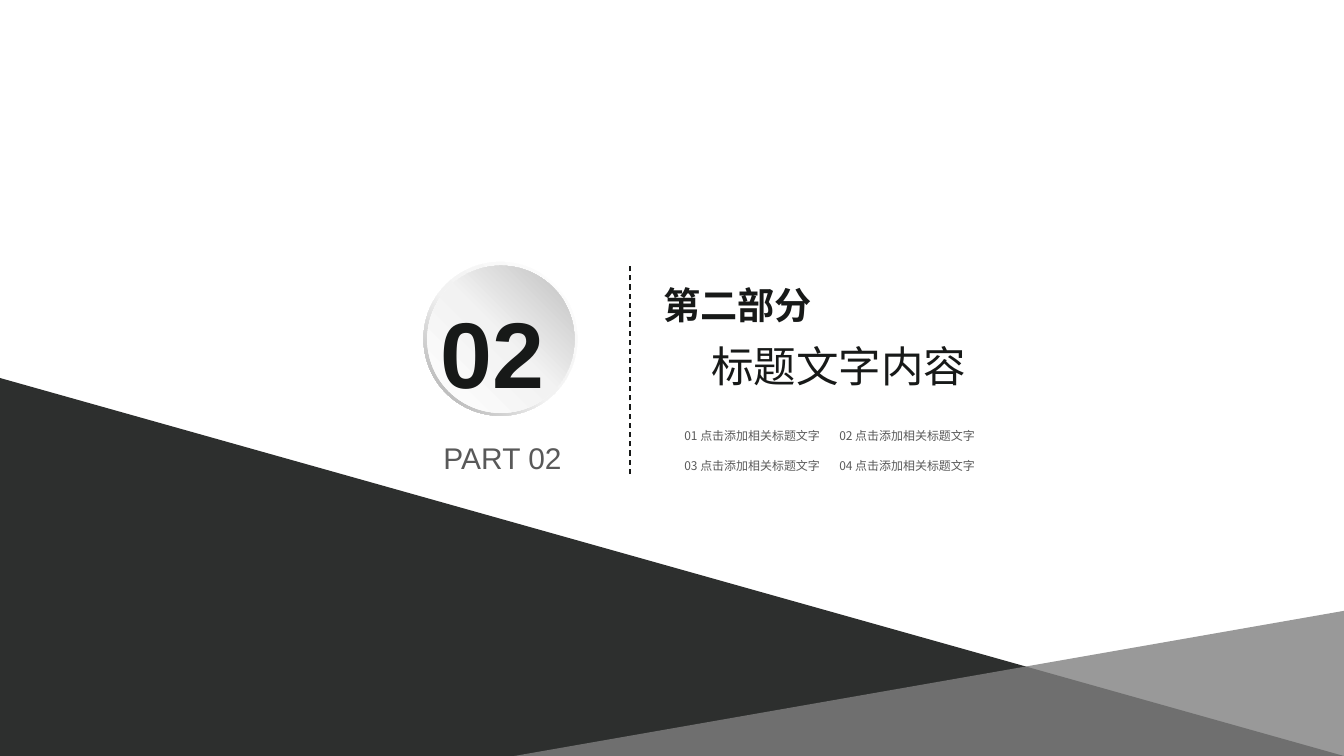
from copy import deepcopy

from pptx import Presentation
from pptx import util as u
from pptx.dml.color import RGBColor
from pptx.enum import dml, shapes, text
from pptx.oxml.ns import qn
from lxml import etree

WIDTH, HEIGHT = u.Inches(14.06), u.Inches(7.91)
INK, GREY = "171918", "595959"
LATIN, CHINESE = "Arial", "Noto Sans CJK SC"


def x(percent):
    return round(WIDTH * percent / 100)


def y(percent):
    return round(HEIGHT * percent / 100)


def color(value):
    return RGBColor.from_string(value)


def add_polygon(slide, points, fill, opacity):
    corners = [(x(column), y(row)) for column, row in points]
    builder = slide.shapes.build_freeform(*corners[0])
    builder.add_line_segments(corners[1:], close=True)
    shape = builder.convert_to_shape()
    shape.shadow.inherit = False
    shape.fill.solid()
    shape.fill.fore_color.rgb = color(fill)
    shape.line.fill.background()
    srgb = shape.fill._xPr.find(".//" + qn("a:srgbClr"))
    etree.SubElement(srgb, qn("a:alpha"), val=str(opacity * 1000))


def add_disc(group, kind, left, top, width, height, stops, angle):
    shape = group.shapes.add_shape(kind, x(left), y(top), x(width), y(height))
    shape.shadow.inherit = False
    shape.line.fill.background()
    shape.fill.gradient()
    shape.fill.gradient_angle = angle
    stop_list = shape.fill._xPr.find(".//" + qn("a:gsLst"))
    stop_list.append(deepcopy(stop_list[-1]))
    for stop, (position, value) in zip(shape.fill.gradient_stops, stops):
        stop.position = position
        stop.color.rgb = color(value)
    return shape


def add_badge(slide):
    group = slide.shapes.add_group_shape()
    ring = add_disc(group, shapes.MSO_SHAPE.DONUT, 31.51, 34.64, 11.45, 20.35,
                    [(0, "FFFFFF"), (0.55, "F2F2F2"), (1, "A6A6A6")], 225)
    ring.adjustments[0] = 0.05
    add_disc(group, shapes.MSO_SHAPE.OVAL, 31.79, 35.15, 10.95, 19.47,
             [(0, "FFFFFF"), (0.51, "F2F2F2"), (1, "BFBFBF")], 45)


def add_divider(slide, column, top, bottom):
    line = slide.shapes.add_connector(shapes.MSO_CONNECTOR.STRAIGHT,
                                      x(column), y(bottom), x(column), y(top))
    line.line.color.rgb = color(INK)
    line.line.width = u.Pt(1)
    line.line.dash_style = dml.MSO_LINE.DASH
    etree.SubElement(line._element.spPr, qn("a:effectLst"))


def add_frame(slide, left, top, width, height):
    frame = slide.shapes.add_textbox(x(left), y(top), x(width), y(height)).text_frame
    frame.margin_left = frame.margin_right = frame.margin_top = frame.margin_bottom = 0
    frame.vertical_anchor = text.MSO_ANCHOR.TOP
    frame.word_wrap = False
    return frame


def write(paragraph, words, size, font=CHINESE, ink=INK, bold=False, before=0, indent=0):
    if before:
        paragraph.space_before = u.Pt(before)
    if indent:
        paragraph._p.get_or_add_pPr().set("marL", str(x(indent)))
    run = paragraph.add_run()
    run.text = words
    run.font.size = u.Pt(size)
    run.font.bold = bold
    run.font.name = font
    run.font.color.rgb = color(ink)
    etree.SubElement(run._r.get_or_add_rPr(), qn("a:ea"), typeface=font)


def add_heading(slide):
    frame = add_frame(slide, 49.36, 37.29, 24.54, 17.2)
    write(frame.paragraphs[0], "第二部分", 28, bold=True)
    write(frame.add_paragraph(), "标题文字内容", 32, before=10.5, indent=3.56)


def add_topics(slide):
    for index in range(4):
        row, column = divmod(index, 2)
        frame = add_frame(slide, 50.92 + 11.53 * column, 56.7 + 3.92 * row, 10.4, 2.3)
        write(frame.paragraphs[0], f"{index + 1:02d} 点击添加相关标题文字", 9, ink=GREY)


def main():
    presentation = Presentation()
    presentation.slide_width, presentation.slide_height = WIDTH, HEIGHT
    slide = presentation.slides.add_slide(presentation.slide_layouts[6])
    add_polygon(slide, [(0, 50), (100, 100), (0, 100)], INK, 90)
    add_polygon(slide, [(100, 80.8), (38.26, 100), (100, 100)], "808080", 80)
    add_heading(slide)
    add_divider(slide, 46.87, 35.15, 62.71)
    part = add_frame(slide, 33, 58.2, 9.89, 4.8)
    write(part.paragraphs[0], "PART 02", 22.5, font=LATIN, ink=GREY)
    add_badge(slide)
    number = add_frame(slide, 32.75, 39.1, 9.89, 14.92)
    write(number.paragraphs[0], "02", 70.3, font=LATIN, bold=True)
    add_topics(slide)
    presentation.save("out.pptx")


if __name__ == "__main__":
    main()
